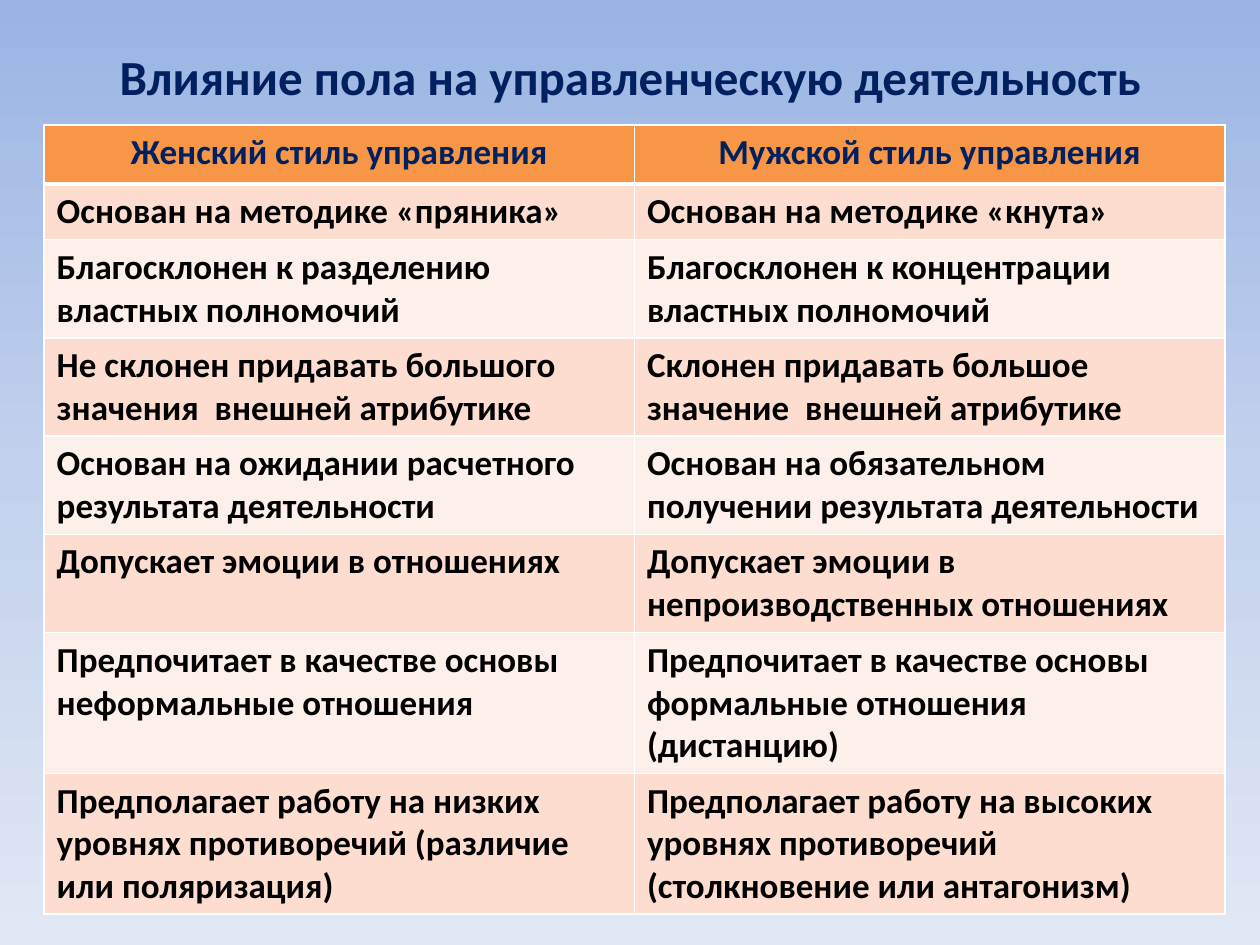
"""Build a slide comparing female and male management styles in a table."""
from copy import deepcopy
from typing import NamedTuple

from lxml import etree
from pptx import Presentation
from pptx.dml.color import RGBColor
from pptx.enum.text import MSO_ANCHOR, PP_ALIGN
from pptx.oxml.ns import qn
from pptx.util import Cm, Pt

CENTER = PP_ALIGN.CENTER
LEFT = PP_ALIGN.LEFT
MIDDLE = MSO_ANCHOR.MIDDLE

FONT = "Calibri"
NAVY = RGBColor(0x00, 0x20, 0x60)
BLACK = RGBColor(0x00, 0x00, 0x00)
WHITE = RGBColor(0xFF, 0xFF, 0xFF)
ORANGE = RGBColor(0xF7, 0x96, 0x46)
PEACH = RGBColor(0xFC, 0xDD, 0xCF)
PALE_PEACH = RGBColor(0xFD, 0xEF, 0xE9)
SKY = (
    (0, RGBColor(0x9A, 0xB5, 0xE4)),
    (0.5, RGBColor(0xC2, 0xD1, 0xED)),
    (1, RGBColor(0xE1, 0xE8, 0xF5)),
)
THIN, THICK = Pt(1), Pt(3)
HEADER_HEIGHT = Cm(1.19)
LINE_HEIGHT = Cm(0.86)
CELL_PADDING = Cm(0.26)


class StyleRow(NamedTuple):
    """One compared trait and the number of text lines it needs."""

    female: str
    male: str
    lines: int = 2


HEADER = StyleRow("Женский стиль управления", "Мужской стиль управления", 1)
TRAITS = (
    StyleRow("Основан на методике «пряника»", "Основан на методике «кнута»", 1),
    StyleRow(
        "Благосклонен к разделению властных полномочий",
        "Благосклонен к концентрации властных полномочий",
    ),
    StyleRow(
        "Не склонен придавать большого значения  внешней атрибутике",
        "Склонен придавать большое значение  внешней атрибутике",
    ),
    StyleRow(
        "Основан на ожидании расчетного результата деятельности",
        "Основан на обязательном получении результата деятельности",
    ),
    StyleRow(
        "Допускает эмоции в отношениях",
        "Допускает эмоции в непроизводственных отношениях",
    ),
    StyleRow(
        "Предпочитает в качестве основы неформальные отношения",
        "Предпочитает в качестве основы формальные отношения (дистанцию)",
        3,
    ),
    StyleRow(
        "Предполагает работу на низких уровнях противоречий (различие или поляризация)",
        "Предполагает работу на высоких уровнях противоречий (столкновение или антагонизм)",
        3,
    ),
)


def paint_background(page) -> None:
    """Fill the page with a vertical three-stop gradient."""
    fill = page.background.fill
    fill.gradient()
    fill.gradient_angle = 270
    stop_list = page.element.find(".//" + qn("a:gsLst"))
    stop_list.append(deepcopy(stop_list[-1]))
    for stop, (position, color) in zip(fill.gradient_stops, SKY):
        stop.position = position
        stop.color.rgb = color


def write(frame, text: str, size: int, color: RGBColor, align: PP_ALIGN) -> None:
    """Write one bold run into the first paragraph of a text frame."""
    frame.word_wrap = True
    para = frame.paragraphs[0]
    para.alignment = align
    span = para.add_run()
    span.text = text
    span.font.name = FONT
    span.font.size = Pt(size)
    span.font.bold = True
    span.font.color.rgb = color


def add_borders(cell, top: int, bottom: int) -> None:
    """Draw white borders around a cell, ahead of its fill."""
    properties = cell._tc.get_or_add_tcPr()
    widths = {"a:lnL": THIN, "a:lnR": THIN, "a:lnT": top, "a:lnB": bottom}
    for index, (tag, width) in enumerate(widths.items()):
        line = etree.Element(qn(tag), w=str(width))
        solid = etree.SubElement(line, qn("a:solidFill"))
        etree.SubElement(solid, qn("a:srgbClr"), val=str(WHITE))
        properties.insert(index, line)


def add_title(page, text: str) -> None:
    """Place the centred page title."""
    box = page.shapes.add_textbox(Cm(1.27), Cm(0.76), Cm(22.86), Cm(1.55))
    box.text_frame.vertical_anchor = MIDDLE
    write(box.text_frame, text, 28, NAVY, CENTER)


def add_style_table(page) -> None:
    """Place the table with its header and banded trait rows."""
    rows = (HEADER, *TRAITS)
    heights = [HEADER_HEIGHT] + [
        trait.lines * LINE_HEIGHT + CELL_PADDING for trait in TRAITS
    ]
    table = page.shapes.add_table(
        len(rows), 2, Cm(0.89), Cm(2.52), Cm(23.8), sum(heights)
    ).table
    for number, (row, height) in enumerate(zip(rows, heights)):
        table.rows[number].height = height
        is_header = number == 0
        band = PEACH if number % 2 else PALE_PEACH
        for column, text in enumerate((row.female, row.male)):
            cell = table.cell(number, column)
            cell.fill.solid()
            cell.fill.fore_color.rgb = ORANGE if is_header else band
            add_borders(
                cell,
                top=THICK if number == 1 else THIN,
                bottom=THICK if is_header else THIN,
            )
            write(
                cell.text_frame,
                text,
                20,
                NAVY if is_header else BLACK,
                CENTER if is_header else LEFT,
            )


def main() -> None:
    """Create the deck and save it."""
    deck = Presentation()
    deck.slide_width, deck.slide_height = Cm(25.4), Cm(19.05)
    page = deck.slides.add_slide(deck.slide_layouts[6])
    paint_background(page)
    add_title(page, "Влияние пола на управленческую деятельность")
    add_style_table(page)
    deck.save("out.pptx")


if __name__ == "__main__":
    main()
